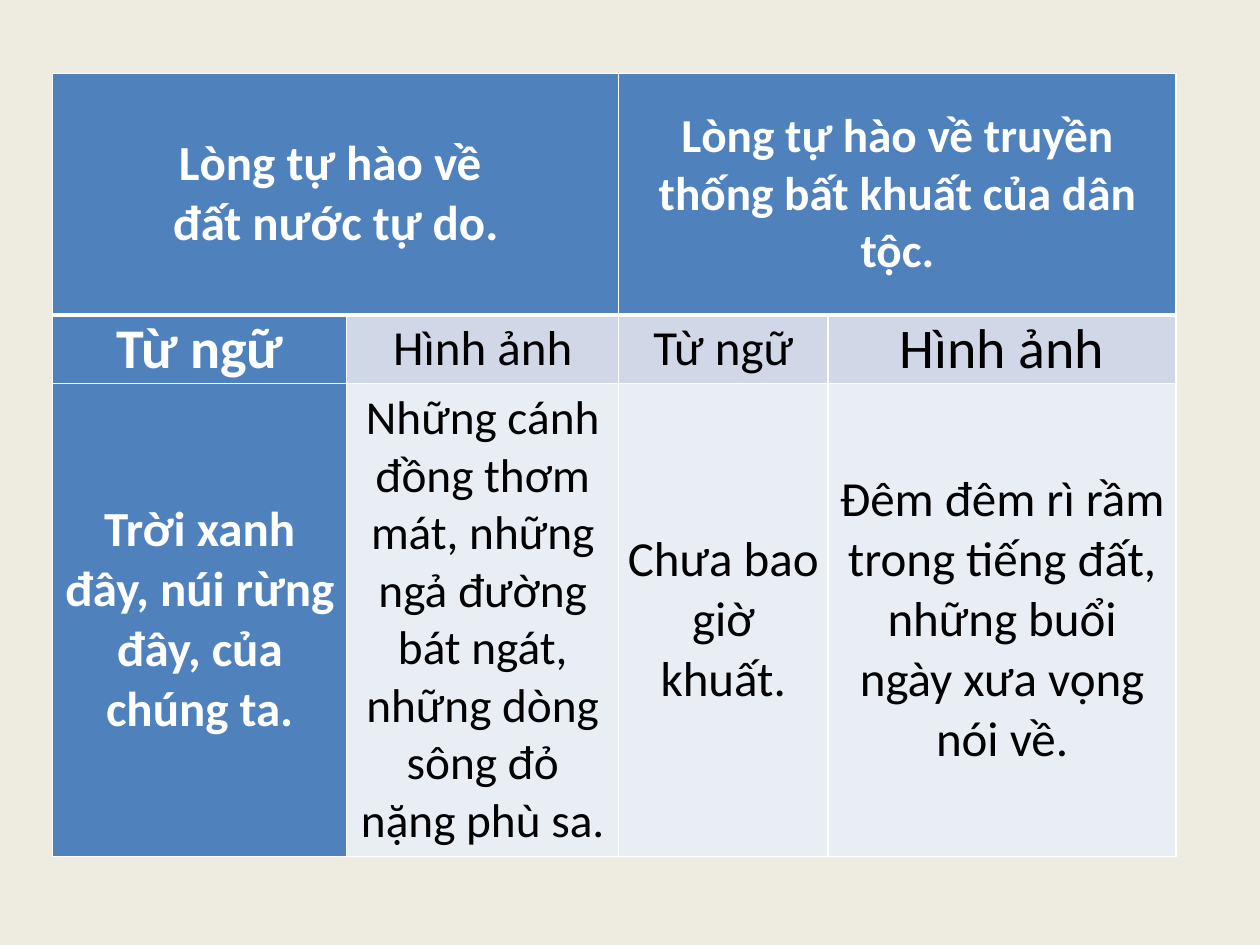
import pptx
import pptx.util
import pptx.dml.color
import pptx.enum.text
import pptx.oxml
import pptx.oxml.ns

Cm = pptx.util.Cm
Pt = pptx.util.Pt
RGBColor = pptx.dml.color.RGBColor

WHITE = RGBColor(0xFF, 0xFF, 0xFF)
BLACK = RGBColor(0, 0, 0)
BLUE = RGBColor(0x4F, 0x81, 0xBD)
PALE = RGBColor(0xD0, 0xD8, 0xE8)
LIGHT = RGBColor(0xE9, 0xED, 0xF4)
CREAM = RGBColor(0xEE, 0xEC, 0xE1)

COLS = [5.93, 5.48, 4.22, 7.02]
ROWS = [4.87, 1.35, 9.53]
BANDS = [BLUE, PALE, LIGHT]
CELLS = [
    [("Lòng tự hào về \nđất nước tự do.", 28), None,
     ("Lòng tự hào về truyền thống bất khuất của dân tộc.", 27), None],
    [("Từ ngữ", 32), ("Hình ảnh", 28), ("Từ ngữ", 28), ("Hình ảnh", 32)],
    [("Trời xanh đây, núi rừng đây, của chúng ta.", 28),
     ("Những cánh đồng thơm mát, những ngả đường bát ngát, "
      "những dòng sông đỏ nặng phù sa.", 27),
     ("Chưa bao giờ khuất.", 28),
     ("Đêm đêm rì rầm trong tiếng đất, những buổi ngày xưa vọng nói về.", 28)],
]


def edge(cell, row):
    """Give a cell white borders, thick between the header and the body."""
    wide = {0: "lnB", 1: "lnT"}.get(row)
    space = pptx.oxml.ns.nsdecls("a")
    props = cell._tc.get_or_add_tcPr()
    for spot, side in enumerate(("lnL", "lnR", "lnT", "lnB")):
        width = Pt(3 if side == wide else 1)
        props.insert(spot, pptx.oxml.parse_xml(
            f'<a:{side} {space} w="{width}"><a:solidFill>'
            f'<a:srgbClr val="{WHITE}"/></a:solidFill></a:{side}>'))


def write(cell, text, size, bold):
    """Put centred text in a cell."""
    cell.text = text
    cell.vertical_anchor = pptx.enum.text.MSO_ANCHOR.MIDDLE
    cell.margin_left = cell.margin_right = Cm(0.18)
    cell.margin_top = cell.margin_bottom = 0
    for para in cell.text_frame.paragraphs:
        para.alignment = pptx.enum.text.PP_ALIGN.CENTER
        para.font.name = "Calibri"
        para.font.size = Pt(size)
        para.font.bold = bold
        para.font.color.rgb = WHITE if bold else BLACK


def build(slide):
    """Add the table of words and images."""
    frame = slide.shapes.add_table(len(ROWS), len(COLS), Cm(1.06), Cm(1.48),
                                   Cm(sum(COLS)), Cm(sum(ROWS)))
    table = frame.table
    table.first_col = True
    for col, width in zip(table.columns, COLS):
        col.width = Cm(width)
    for row, height in zip(table.rows, ROWS):
        row.height = Cm(height)
    for left in (0, 2):
        table.cell(0, left).merge(table.cell(0, left + 1))
    for y, line in enumerate(CELLS):
        for x, item in enumerate(line):
            cell = table.cell(y, x)
            head = y == 0 or x == 0
            cell.fill.solid()
            cell.fill.fore_color.rgb = BLUE if head else BANDS[y]
            edge(cell, y)
            if item:
                write(cell, *item, head)


def main():
    """Make the slide and save it."""
    deck = pptx.Presentation()
    deck.slide_width, deck.slide_height = Cm(25.4), Cm(19.05)
    slide = deck.slides.add_slide(deck.slide_layouts[6])
    slide.background.fill.solid()
    slide.background.fill.fore_color.rgb = CREAM
    build(slide)
    deck.save("out.pptx")


if __name__ == "__main__":
    main()
